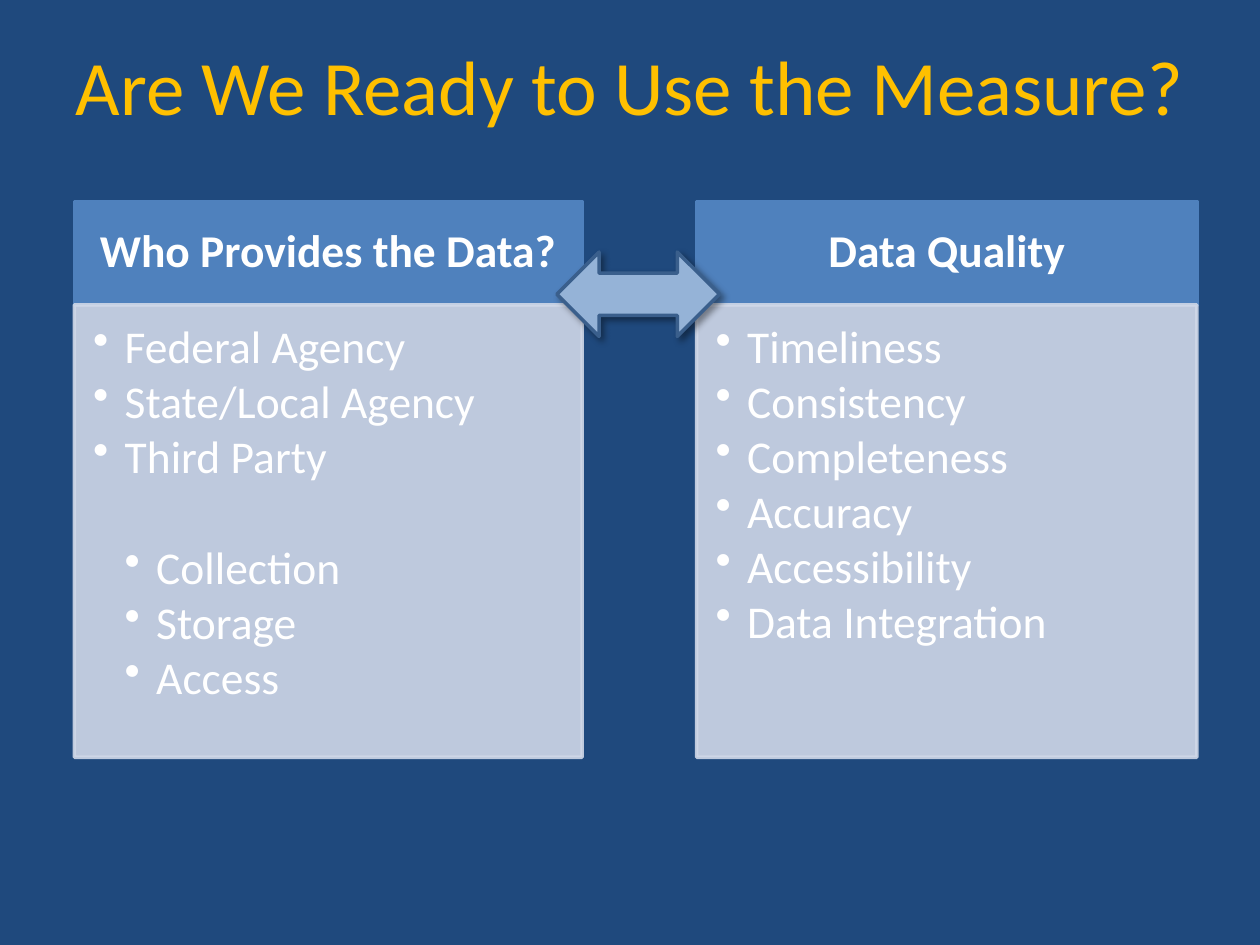
from dataclasses import dataclass

from lxml.etree import SubElement
from pptx import Presentation
from pptx.dml.color import RGBColor
from pptx.enum.shapes import MSO_SHAPE as Preset
from pptx.enum.text import MSO_ANCHOR as Anchor, PP_ALIGN as Align
from pptx.oxml.ns import qn
from pptx.util import Inches, Pt

FONT = "Calibri"
NAVY, GOLD, WHITE = "1F497D", "FFC000", "FFFFFF"
BLUE, PALE, ARROW_FILL, ARROW_LINE = "4F81BD", "D0D8E8", "95B3D7", "3A5F8C"
BODY_SIZE = 26
LINE_SPACING = 0.9
INDENT = 0.25
ITEM_GAP = 3.4
GROUP_GAP = 32


@dataclass
class Area:
    """A place on the slide, in percent of its width and height."""
    left: float
    top: float
    width: float
    height: float


@dataclass
class Panel:
    left: float
    width: float
    heading: str
    groups: list[list[str]]  # each later group is indented one step further


TITLE_AREA = Area(5, 2.27, 90, 13.33)
ARROW_AREA = Area(44.2, 26.67, 12.9, 8.93)
HEADING_TOP, HEADING_HEIGHT = 21.33, 10.94
BODY_TOP, BODY_HEIGHT = HEADING_TOP + HEADING_HEIGHT, 47.87

PANELS = [
    Panel(5.9, 40.3, "Who Provides the Data?",
          [["Federal Agency", "State/Local Agency", "Third Party"],
           ["Collection", "Storage", "Access"]]),
    Panel(55.3, 39.7, "Data Quality",
          [["Timeliness", "Consistency", "Completeness", "Accuracy",
            "Accessibility", "Data Integration"]]),
]

deck = Presentation()
deck.slide_width, deck.slide_height = Inches(10), Inches(7.5)
page = deck.slides.add_slide(deck.slide_layouts[6])


def color(hex_code: str) -> RGBColor:
    return RGBColor.from_string(hex_code)


def place(area: Area) -> tuple[int, int, int, int]:
    across, down = deck.slide_width / 100, deck.slide_height / 100
    return (round(area.left * across), round(area.top * down),
            round(area.width * across), round(area.height * down))


def add_block(preset: Preset, area: Area, fill: str, line: str, opacity: int = 100):
    shape = page.shapes.add_shape(preset, *place(area))
    shape.shadow.inherit = False
    shape.fill.solid()
    shape.fill.fore_color.rgb = color(fill)
    shape.line.color.rgb = color(line)
    shape.line.width = Pt(2)
    if opacity < 100:
        for tone in shape._element.spPr.iter(qn("a:srgbClr")):
            SubElement(tone, qn("a:alpha"), val=str(opacity * 1000))
    return shape


def set_frame(shape, anchor: Anchor, left=0.0, top=0.0, right=0.0, bottom=0.0):
    frame = shape.text_frame
    frame.word_wrap = True
    frame.vertical_anchor = anchor
    frame.margin_left, frame.margin_top = Inches(left), Inches(top)
    frame.margin_right, frame.margin_bottom = Inches(right), Inches(bottom)
    return frame


def write(para, text: str, size: int, tone: str, align: Align, bold: bool = False) -> None:
    para.text = text
    para.alignment = align
    para.font.name, para.font.size, para.font.bold = FONT, Pt(size), bold
    para.font.color.rgb = color(tone)


def add_bullet(para, level: int) -> None:
    properties = para._p.get_or_add_pPr()
    properties.set("marL", str(Inches(INDENT * level)))
    properties.set("indent", str(-Inches(INDENT)))
    bullet = properties.makeelement(qn("a:buChar"), {"char": "•"})
    properties.find(qn("a:defRPr")).addprevious(bullet)


def add_shadow(shape) -> None:
    """Soft black shadow, down and to the right."""
    effects = shape._element.spPr.find(qn("a:effectLst"))
    shadow = SubElement(effects, qn("a:outerShdw"), blurRad=str(Pt(4)), dist=str(Pt(3)),
                        dir=str(45 * 60000), algn="tl", rotWithShape="0")
    tone = SubElement(shadow, qn("a:srgbClr"), val="000000")
    SubElement(tone, qn("a:alpha"), val="40000")


def add_panel(panel: Panel) -> None:
    heading = add_block(Preset.RECTANGLE, Area(panel.left, HEADING_TOP, panel.width, HEADING_HEIGHT),
                        BLUE, BLUE)
    para = set_frame(heading, Anchor.MIDDLE, 0.2, 0.12, 0.2, 0.12).paragraphs[0]
    write(para, panel.heading, BODY_SIZE, WHITE, Align.CENTER, bold=True)
    para.line_spacing = LINE_SPACING

    body = add_block(Preset.RECTANGLE, Area(panel.left, BODY_TOP, panel.width, BODY_HEIGHT),
                     PALE, PALE, opacity=90)
    frame = set_frame(body, Anchor.TOP, 0.15, 0.15, 0.2, 0.23)
    for level, group in enumerate(panel.groups, start=1):
        for position, item in enumerate(group):
            first = level == 1 and position == 0
            para = frame.paragraphs[0] if first else frame.add_paragraph()
            write(para, item, BODY_SIZE, WHITE, Align.LEFT)
            para.line_spacing = LINE_SPACING
            para.space_after = Pt(ITEM_GAP)
            if level > 1 and position == 0:
                para.space_before = Pt(GROUP_GAP)
            add_bullet(para, level)


background = page.background.fill
background.solid()
background.fore_color.rgb = color(NAVY)

title = page.shapes.add_textbox(*place(TITLE_AREA))
write(set_frame(title, Anchor.MIDDLE).paragraphs[0],
      "Are We Ready to Use the Measure?", 44, GOLD, Align.CENTER)
for panel in PANELS:
    add_panel(panel)
add_shadow(add_block(Preset.LEFT_RIGHT_ARROW, ARROW_AREA, ARROW_FILL, ARROW_LINE))

deck.save("out.pptx")
